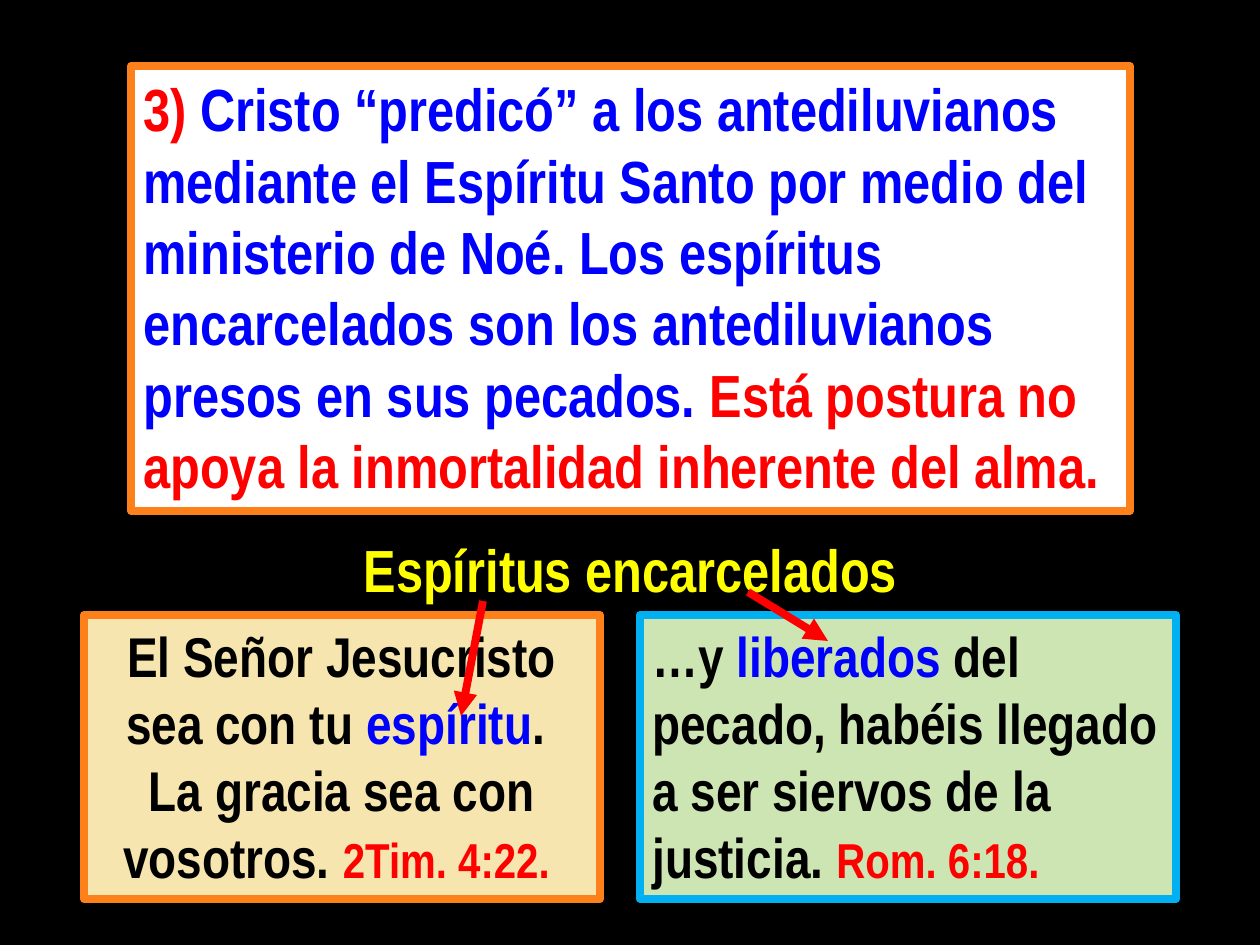
from dataclasses import dataclass

from lxml import etree
from pptx import Presentation
from pptx import util as u
from pptx.dml.color import RGBColor
from pptx.enum import shapes, text
from pptx.oxml.ns import qn

EMU_PER_PX = 914400 / 126


@dataclass(frozen=True)
class Theme:
    """Colours, font and type sizes of the slide."""
    font: str = "Arial Narrow"
    background: str = "000000"
    dark: str = "000000"
    blue: str = "0000FE"
    red: str = "FF0000"
    yellow: str = "FFFF00"
    white: str = "FFFFFF"
    sand: str = "F6E5AE"
    green: str = "CDE4B3"
    orange: str = "FE801A"
    sky: str = "00B0F0"
    large: int = 34
    medium: int = 32
    small: int = 28
    stroke: float = 4.5


THEME = Theme()


def px(*lengths):
    """Turn pixel lengths into EMU."""
    return [u.Emu(round(length * EMU_PER_PX)) for length in lengths]


def colour(value):
    """Return the colour object for a hex value."""
    return RGBColor.from_string(value)


def add_run(paragraph, words, *, color=THEME.dark, size=THEME.medium):
    """Append one bold run in the given format."""
    run = paragraph.add_run()
    run.text = words
    run.font.name = THEME.font
    run.font.size = u.Pt(size)
    run.font.bold = True
    run.font.color.rgb = colour(color)


def write(shape, paragraphs, *, align=text.PP_ALIGN.LEFT):
    """Fill a shape with paragraphs, each a list of (words, format) runs."""
    frame = shape.text_frame
    frame.word_wrap = True
    frame.auto_size = text.MSO_AUTO_SIZE.NONE
    frame.vertical_anchor = text.MSO_ANCHOR.TOP
    for index, runs in enumerate(paragraphs):
        paragraph = frame.add_paragraph() if index else frame.paragraphs[0]
        paragraph.alignment = align
        for words, style in runs:
            add_run(paragraph, words, **style)


def add_panel(slide, box, paragraphs, *, fill, line, **style):
    """Draw a framed rectangle holding text."""
    panel = slide.shapes.add_shape(shapes.MSO_SHAPE.RECTANGLE, *px(*box))
    panel.shadow.inherit = False
    panel.fill.solid()
    panel.fill.fore_color.rgb = colour(fill)
    panel.line.color.rgb = colour(line)
    panel.line.width = u.Pt(THEME.stroke)
    write(panel, paragraphs, **style)


def set_title(slide, box, runs):
    """Place and format the title placeholder."""
    title = slide.shapes.title
    title.left, title.top, title.width, title.height = px(*box)
    write(title, [runs], align=text.PP_ALIGN.CENTER)


def add_arrow(slide, start, end):
    """Draw a red arrow between two points."""
    arrow = slide.shapes.add_connector(
        shapes.MSO_CONNECTOR.STRAIGHT, *px(*start, *end))
    arrow.line.color.rgb = colour(THEME.red)
    arrow.line.width = u.Pt(THEME.stroke)
    etree.SubElement(arrow.line._get_or_add_ln(), qn("a:tailEnd"), type="triangle")
    etree.SubElement(arrow._element.spPr, qn("a:effectLst"))


def main():
    """Build the slide and save it."""
    presentation = Presentation()
    presentation.slide_width, presentation.slide_height = px(1260, 945)
    slide = presentation.slides.add_slide(presentation.slide_layouts[5])
    slide.background.fill.solid()
    slide.background.fill.fore_color.rgb = colour(THEME.background)

    large_red = dict(color=THEME.red, size=THEME.large)
    large_blue = dict(color=THEME.blue, size=THEME.large)
    blue = dict(color=THEME.blue)
    citation = dict(color=THEME.red, size=THEME.small)

    add_panel(slide, (131, 66, 999, 445), [[
        ("3) ", large_red),
        ("Cristo “predicó” a los antediluvianos mediante el Espíritu Santo "
         "por medio del ministerio de Noé. Los espíritus encarcelados son "
         "los antediluvianos presos en sus pecados. ", large_blue),
        ("Está postura no apoya la inmortalidad inherente del alma.", large_red),
    ]], fill=THEME.white, line=THEME.orange)
    add_panel(slide, (84, 615, 516, 284), [
        [("El Señor Jesucristo sea con tu ", {}), ("espíritu", blue), (". ", {})],
        [("La gracia sea con vosotros. ", {}), ("2Tim. 4:22. ", citation)],
    ], fill=THEME.sand, line=THEME.orange, align=text.PP_ALIGN.CENTER)
    add_panel(slide, (640, 615, 536, 284), [[
        ("…y ", {}),
        ("liberados", blue),
        (" del pecado, habéis llegado a ser siervos de la justicia. ", {}),
        ("Rom. 6:18.", citation),
    ]], fill=THEME.green, line=THEME.sky)
    set_title(slide, (344, 527, 573, 84), [
        ("Espíritus encarcelados", dict(color=THEME.yellow, size=THEME.large))])
    add_arrow(slide, (483, 601), (461, 716))
    add_arrow(slide, (748, 592), (828, 641))

    presentation.save("out.pptx")


if __name__ == "__main__":
    main()
